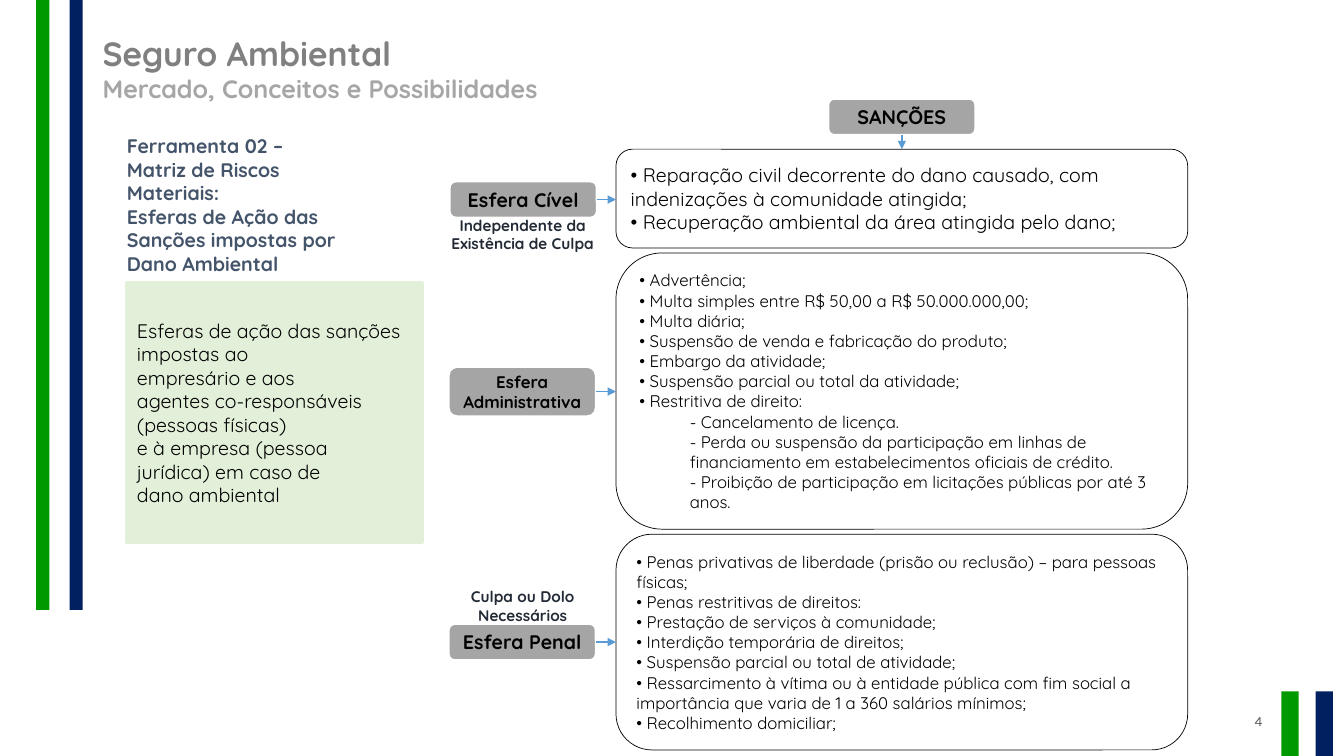
import pptx
import pptx.util
import pptx.dml.color
import pptx.enum.shapes
import pptx.enum.text
import pptx.oxml.ns
from lxml import etree

Inches = pptx.util.Inches
Pt = pptx.util.Pt
RGBColor = pptx.dml.color.RGBColor
SHAPE = pptx.enum.shapes.MSO_SHAPE
ANCHOR = pptx.enum.text.MSO_ANCHOR
ALIGN = pptx.enum.text.PP_ALIGN

GREEN = RGBColor(0x00, 0x99, 0x00)
NAVY = RGBColor(0x00, 0x20, 0x60)
WHITE = RGBColor(0xFF, 0xFF, 0xFF)
BLACK = RGBColor(0x00, 0x00, 0x00)
TITLE_GRAY = RGBColor(0x80, 0x80, 0x80)
SUBTITLE_GRAY = RGBColor(0xA6, 0xA6, 0xA6)
NUMBER_GRAY = RGBColor(0x59, 0x59, 0x59)
SLATE = RGBColor(0x44, 0x54, 0x6A)
NOTE_INK = RGBColor(0x22, 0x2A, 0x35)
LABEL_GRAY = RGBColor(0xA5, 0xA5, 0xA5)
ARROW_BLUE = RGBColor(0x5B, 0x9B, 0xD5)
PALE_GREEN = RGBColor(0xE2, 0xF0, 0xD9)

CIVIL = [
    "• Reparação civil decorrente do dano causado, com indenizações à comunidade atingida;",
    "• Recuperação ambiental da área atingida pelo dano;",
]
ADMINISTRATIVE = [
    "• Advertência;",
    "• Multa simples entre R$ 50,00 a R$ 50.000.000,00;",
    "• Multa diária;",
    "• Suspensão de venda e fabricação do produto;",
    "• Embargo da atividade;",
    "• Suspensão parcial ou total da atividade;",
    "• Restritiva de direito:",
    "- Cancelamento de licença.",
    "- Perda ou suspensão da participação em linhas de financiamento em "
    "estabelecimentos oficiais de crédito.",
    "- Proibição de participação em licitações públicas por até 3 anos.",
]
PENAL = [
    "• Penas privativas de liberdade (prisão ou reclusão) – para pessoas físicas;",
    "• Penas restritivas de direitos:",
    "• Prestação de serviços à comunidade;",
    "• Interdição temporária de direitos;",
    "• Suspensão parcial ou total de atividade;",
    "• Ressarcimento à vítima ou à entidade pública com fim social a "
    "importância que varia de 1 a 360 salários mínimos;",
    "• Recolhimento domiciliar;",
]
SCOPE = [
    "Esferas de ação das sanções impostas ao",
    "empresário e aos",
    "agentes co-responsáveis",
    "(pessoas físicas)",
    "e à empresa (pessoa",
    "jurídica) em caso de",
    "dano ambiental",
]
HEADING = [
    "Ferramenta 02 – Matriz de Riscos Materiais:",
    "Esferas de Ação das Sanções impostas por Dano Ambiental",
]

SANCTIONS_X, SANCTIONS_W = 6.11, 5.67
LABEL_W, LABEL_H = 1.46, 0.36


def write(sp, lines, size, color=BLACK, bold=False, align=ALIGN.LEFT,
          anchor=ANCHOR.MIDDLE, font="Quicksand"):
    """Fill a shape with one paragraph per line; dashed lines are indented."""
    tf = sp.text_frame
    tf.word_wrap = True
    tf.vertical_anchor = anchor
    tf.text = "\n".join(lines)
    for p in tf.paragraphs:
        p.alignment = align
        if p.text.startswith("- "):
            p.level = 1
            pPr = p._p.get_or_add_pPr()
            pPr.set("marL", str(Inches(0.5)))
            pPr.set("indent", "0")
        for r in p.runs:
            r.font.name = font
            r.font.size = Pt(size)
            r.font.bold = bold
            r.font.color.rgb = color


def add_box(s, kind, box, fill=None, line=None, width=1):
    """Add a flat preset shape in the given box."""
    sp = s.shapes.add_shape(kind, *map(Inches, box))
    sp.shadow.inherit = False
    if fill is None:
        sp.fill.background()
    else:
        sp.fill.solid()
        sp.fill.fore_color.rgb = fill
    if line is None:
        sp.line.fill.background()
    else:
        sp.line.color.rgb = line
        sp.line.width = Pt(width)
    return sp


def add_text(s, box, lines, size, **style):
    """Add a text box and return it."""
    sp = s.shapes.add_textbox(*map(Inches, box))
    write(sp, lines, size, **style)
    return sp


def add_arrow(s, x1, y1, x2, y2):
    """Add a straight blue arrow."""
    c = s.shapes.add_connector(pptx.enum.shapes.MSO_CONNECTOR.STRAIGHT,
                               *map(Inches, (x1, y1, x2, y2)))
    c.line.color.rgb = ARROW_BLUE
    c.line.width = Pt(1)
    tail = etree.SubElement(c.line._get_or_add_ln(), pptx.oxml.ns.qn("a:tailEnd"))
    tail.set("type", "triangle")
    etree.SubElement(c._element.spPr, pptx.oxml.ns.qn("a:effectLst"))


def add_stripes(s, x, y, w, h, pitch):
    """Add a green and a navy vertical stripe."""
    for i, color in enumerate((GREEN, NAVY)):
        add_box(s, SHAPE.RECTANGLE, (x + i * pitch, y, w, h), color)


def add_title(s, box):
    """Add the title with its subtitle."""
    sp = add_text(s, box, ["Seguro Ambiental", "Mercado, Conceitos e Possibilidades"],
                  24, color=TITLE_GRAY, bold=True, anchor=ANCHOR.TOP)
    r = sp.text_frame.paragraphs[1].runs[0]
    r.font.size = Pt(18)
    r.font.color.rgb = SUBTITLE_GRAY


def add_side_panel(s, x, y):
    """Add the tool heading and the green scope panel below it."""
    sp = add_box(s, SHAPE.RECTANGLE, (x, y, 2.36, 1.25), line=WHITE, width=3)
    write(sp, HEADING, 14, SLATE, True, anchor=ANCHOR.TOP)
    sp = add_box(s, SHAPE.RECTANGLE, (x + 0.1, y + 1.53, 2.92, 2.57),
                 PALE_GREEN, PALE_GREEN, 3)
    write(sp, SCOPE, 14)


def add_label(s, x, y, text, size=14, h=LABEL_H):
    """Add a gray rounded label."""
    sp = add_box(s, SHAPE.ROUNDED_RECTANGLE, (x, y, LABEL_W, h), LABEL_GRAY, WHITE, 1.5)
    write(sp, [text], size, bold=True, align=ALIGN.CENTER)


def add_sphere(s, top, height, lines, size, label, label_box, label_size=14):
    """Add a box of sanctions with its label and the arrow joining them."""
    sp = add_box(s, SHAPE.ROUNDED_RECTANGLE, (SANCTIONS_X, top, SANCTIONS_W, height),
                 WHITE, BLACK, 0.5)
    write(sp, lines, size)
    x, y, h = label_box
    add_label(s, x, y, label, label_size, h)
    add_arrow(s, x + LABEL_W, y + h / 2, SANCTIONS_X, y + h / 2)


def add_sanctions(s, top):
    """Add the sanctions header, the three spheres and their notes."""
    center = SANCTIONS_X + SANCTIONS_W / 2
    add_label(s, center - LABEL_W / 2, top, "SANÇÕES")
    add_arrow(s, center, top + LABEL_H, center, top + 0.5)
    add_sphere(s, top + 0.5, 0.98, CIVIL, 14, "Esfera Cível", (4.46, 1.8, LABEL_H))
    add_sphere(s, top + 1.53, 2.74, ADMINISTRATIVE, 12, "Esfera Administrativa",
               (4.45, 3.64, 0.49), 12)
    add_sphere(s, top + 4.32, 2.14, PENAL, 12, "Esfera Penal", (4.45, 6.19, LABEL_H))
    for y, note in ((2.09, "Independente da Existência de Culpa"),
                    (5.78, "Culpa ou Dolo Necessários")):
        add_text(s, (4.26, y, 1.85, 0.63), [note], 11, color=NOTE_INK, bold=True,
                 align=ALIGN.CENTER, anchor=ANCHOR.TOP)


def main():
    """Build the slide and save it."""
    prs = pptx.Presentation()
    prs.slide_width = Inches(13.33)
    prs.slide_height = Inches(7.5)
    s = prs.slides.add_slide(prs.slide_layouts[6])
    add_stripes(s, 0.36, -0.01, 0.13, 6.06, 0.33)
    add_stripes(s, 12.71, 6.86, 0.17, 0.66, 0.34)
    add_text(s, (9.62, 6.95, 3, 0.4), ["4"], 10, color=NUMBER_GRAY,
             align=ALIGN.RIGHT, font="Karla")
    add_title(s, (0.92, 0.28, 9.79, 0.81))
    add_side_panel(s, 1.16, 1.28)
    add_sanctions(s, 0.98)
    prs.save("out.pptx")


if __name__ == "__main__":
    main()
